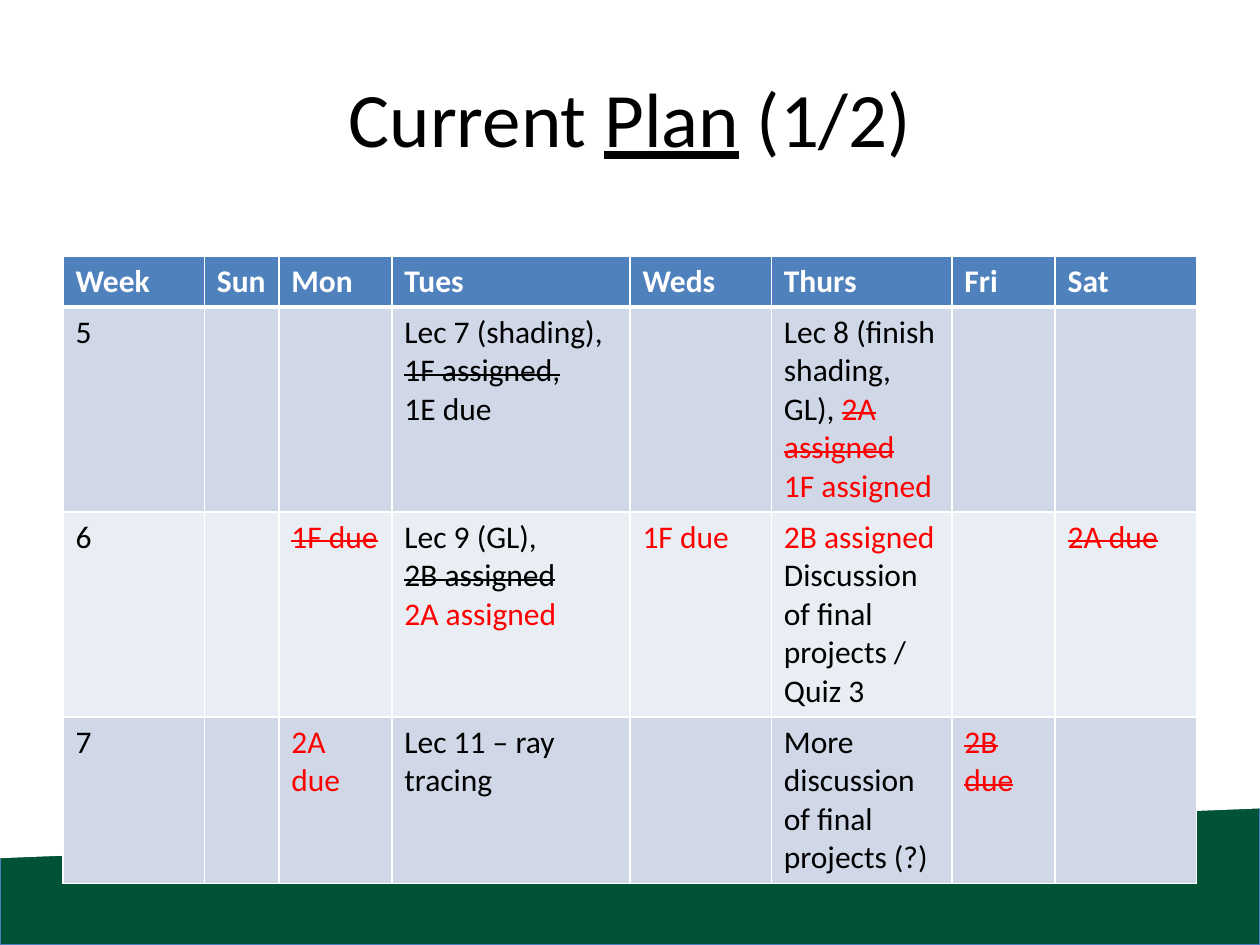
from lxml import etree
from pptx import Presentation
from pptx import util as u
from pptx.dml import color
from pptx.enum import shapes, text
from pptx.oxml import ns

COLORS = {"green": "005334", "edge": "4B7EBC", "white": "FFFFFF", "black": "000000",
          "red": "FF0000", "head": "4F81BD", "odd": "D0D8E8", "even": "E9EDF4"}
DAYS = ["Week", "Sun", "Mon", "Tues", "Weds", "Thurs", "Fri", "Sat"]
WIDTHS = [2.85, 1.5, 2.28, 4.8, 2.85, 3.64, 2.08, 2.85]
HEIGHTS = [1.03, 4.13, 4.13, 3.36]

OLD = {"strike": True}
NEW = {"color": "red"}
MOVED = {"color": "red", "strike": True}

# Each week maps a day to paragraphs; each paragraph is a list of (words, look) runs.
WEEKS = [
    {"Week": [[("5", {})]],
     "Tues": [[("Lec 7 (shading),", {})], [("1F assigned,", OLD)], [("1E due", {})]],
     "Thurs": [[("Lec 8 (finish shading, GL), ", {}), ("2A assigned", MOVED)],
               [("1F assigned", NEW)]]},
    {"Week": [[("6", {})]],
     "Mon": [[("1F due", MOVED)]],
     "Tues": [[("Lec 9 (GL),", {})], [("2B assigned", OLD)], [("2A assigned", NEW)]],
     "Weds": [[("1F due", NEW)]],
     "Thurs": [[("2B assigned", NEW)], [("Discussion of final projects / Quiz 3", {})]],
     "Sat": [[("2A due", MOVED)]]},
    {"Week": [[("7", {})]],
     "Mon": [[("2A due", NEW)]],
     "Tues": [[("Lec 11 – ray tracing", {})]],
     "Thurs": [[("More discussion of final projects (?)", {})]],
     "Fri": [[("2B due", MOVED)]]},
]


def rgb(name):
    return color.RGBColor.from_string(COLORS[name])


class Deck:
    """Holds the text style and the current slide."""

    def __init__(self, font):
        self.font = font
        self.prs = Presentation()
        self.prs.slide_width, self.prs.slide_height = u.Cm(25.4), u.Cm(19.05)
        self.slide = self.prs.slides.add_slide(self.prs.slide_layouts[5])

    def run(self, para, words, size, color="black", strike=False, **look):
        run = para.add_run()
        run.text = words
        for key, value in {"name": self.font, "size": u.Pt(size), **look}.items():
            setattr(run.font, key, value)
        run.font.color.rgb = rgb(color)
        if strike:
            run._r.get_or_add_rPr().set("strike", "sngStrike")

    def fill(self, frame, paras, size, **look):
        """Write paragraphs of (words, look) runs into a text frame."""
        for i, runs in enumerate(paras):
            para = frame.add_paragraph() if i else frame.paragraphs[0]
            for words, own in runs:
                self.run(para, words, size, **{**look, **own})

    def title(self, box, runs):
        shape = self.slide.shapes.title
        for key, value in zip(("left", "top", "width", "height"), box):
            setattr(shape, key, u.Cm(value))
        frame = shape.text_frame
        frame.vertical_anchor = text.MSO_ANCHOR.MIDDLE
        self.fill(frame, [runs], 44)
        frame.paragraphs[0].alignment = text.PP_ALIGN.CENTER

    def shape(self, kind, box, fill, line=None):
        shape = self.slide.shapes.add_shape(kind, *map(u.Cm, box))
        shape.shadow.inherit = False
        shape.fill.solid()
        shape.fill.fore_color.rgb = rgb(fill)
        if line:
            shape.line.color.rgb = rgb(line)
            shape.line.width = u.Pt(0.75)
        else:
            shape.line.fill.background()
        return shape

    def slope(self, box, lean, fill):
        """Add a parallelogram turned on its side, so its long edge slopes up to the right."""
        shape = self.shape(shapes.MSO_SHAPE.PARALLELOGRAM, box, fill)
        shape.adjustments[0] = lean
        shape.rotation = 90
        shape.element.spPr.find(ns.qn("a:xfrm")).set("flipH", "1")

    def cell(self, cell, paras, fill, edges, **look):
        props = cell._tc.get_or_add_tcPr()
        for side, width in edges.items():
            line = etree.SubElement(props, ns.qn("a:ln" + side), w=str(u.Pt(width)))
            solid = etree.SubElement(line, ns.qn("a:solidFill"))
            etree.SubElement(solid, ns.qn("a:srgbClr"), val=COLORS["white"])
        cell.fill.solid()
        cell.fill.fore_color.rgb = rgb(fill)
        self.fill(cell.text_frame, paras, 18, **look)
        if not paras:
            cell.text_frame.paragraphs[0].font.size = u.Pt(18)

    def table(self, left, top, days, weeks, widths, heights):
        box = map(u.Cm, (left, top, sum(widths), sum(heights)))
        table = self.slide.shapes.add_table(len(heights), len(widths), *box).table
        for col, width in zip(table.columns, widths):
            col.width = u.Cm(width)
        for row, height in zip(table.rows, heights):
            row.height = u.Cm(height)
        thin = dict.fromkeys("LRTB", 1)
        for c, day in enumerate(days):
            self.cell(table.cell(0, c), [[(day, {})]], "head", {**thin, "B": 3},
                      color="white", bold=True)
            for r, week in enumerate(weeks, 1):
                edges = {**thin, "T": 3 if r == 1 else 1}
                self.cell(table.cell(r, c), week.get(day, []),
                          "odd" if r % 2 else "even", edges)


def main():
    deck = Deck("Calibri")
    deck.shape(shapes.MSO_SHAPE.RECTANGLE, (0, 14.25, 25.4, 4.8), "green", "edge")
    deck.slope((9.75, 1.65, 5.9, 25.4), 0.17, "white")
    deck.title((1.27, 0.76, 22.86, 3.18),
               [("Current ", {}), ("Plan", {"underline": True}), (" (1/2)", {})])
    deck.table(1.27, 5.16, DAYS, WEEKS, WIDTHS, HEIGHTS)
    deck.prs.save("out.pptx")


if __name__ == "__main__":
    main()
